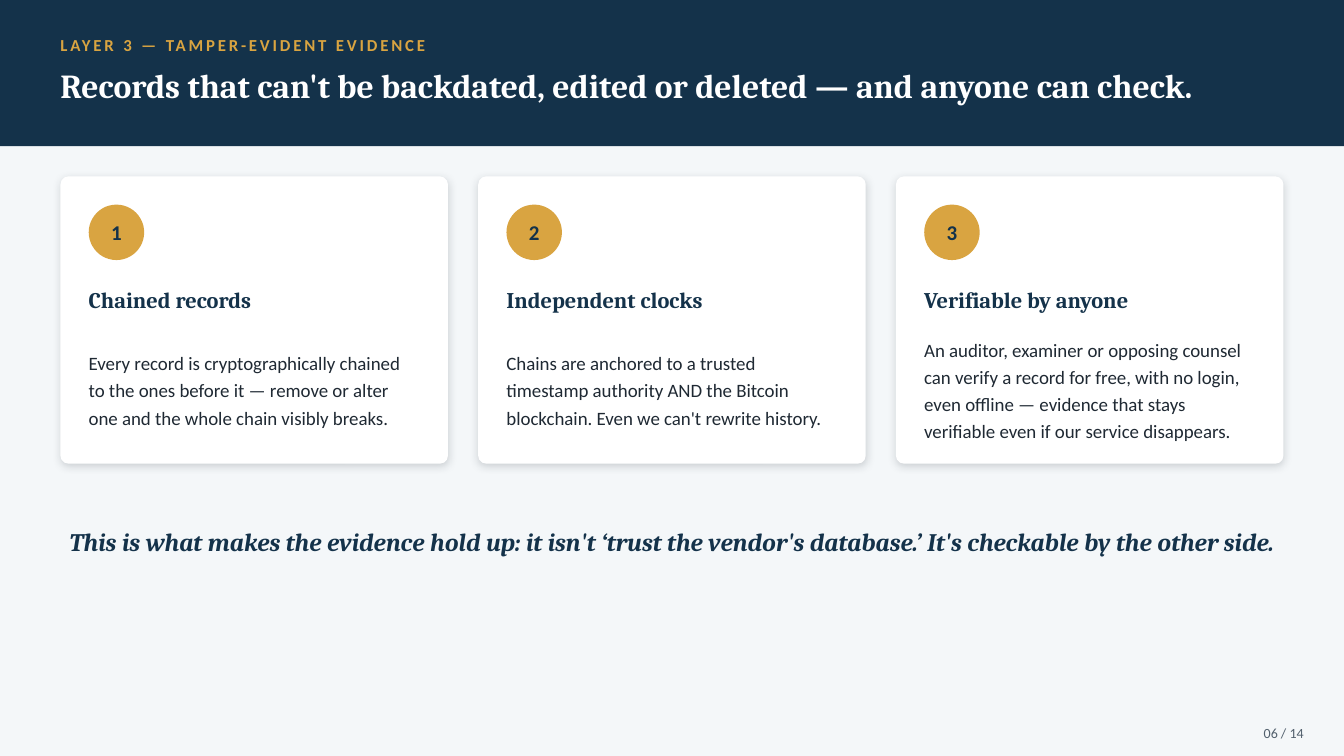
from dataclasses import dataclass

import pptx
import pptx.dml.color
import pptx.enum.shapes
import pptx.enum.text
import pptx.oxml
import pptx.oxml.ns
import pptx.util

Inches = pptx.util.Inches
Shape = pptx.enum.shapes.MSO_SHAPE
Align = pptx.enum.text.PP_ALIGN
Anchor = pptx.enum.text.MSO_ANCHOR


@dataclass(frozen=True)
class Theme:
    navy: str = "14324A"
    gold: str = "D9A441"
    white: str = "FFFFFF"
    ink: str = "1F2933"
    grey: str = "52606D"
    background: str = "F4F7F9"
    heading_font: str = "Cambria"
    body_font: str = "Calibri"
    title_size: float = 24
    statement_size: float = 18
    heading_size: float = 16
    badge_size: float = 15
    body_size: float = 13.5
    eyebrow_size: float = 12
    page_size: float = 10


THEME = Theme()
MARGIN = 0.6
CONTENT_WIDTH = 12.13
CARD_TOP = 1.75
CARD_HEIGHT = 2.85
CARD_GAP = 0.3
CARD_PADDING = 0.28

CARDS = [
    ("Chained records",
     "Every record is cryptographically chained to the ones before it — "
     "remove or alter one and the whole chain visibly breaks."),
    ("Independent clocks",
     "Chains are anchored to a trusted timestamp authority AND the Bitcoin "
     "blockchain. Even we can't rewrite history."),
    ("Verifiable by anyone",
     "An auditor, examiner or opposing counsel can verify a record for free, "
     "with no login, even offline — evidence that stays verifiable even if "
     "our service disappears."),
]


def rgb(colour):
    return pptx.dml.color.RGBColor.from_string(colour)


def write(shape, text, size, colour, font=THEME.body_font, bold=False, italic=False,
          align=Align.LEFT, anchor=Anchor.MIDDLE, line_spacing=None):
    """Fill a shape with one paragraph, without insets, and return the paragraph."""
    frame = shape.text_frame
    frame.word_wrap = True
    frame.vertical_anchor = anchor
    frame.margin_left = frame.margin_right = 0
    frame.margin_top = frame.margin_bottom = 0
    paragraph = frame.paragraphs[0]
    paragraph.text = text
    paragraph.alignment = align
    paragraph.line_spacing = line_spacing
    paragraph.font.name = font
    paragraph.font.size = pptx.util.Pt(size)
    paragraph.font.bold = bold
    paragraph.font.italic = italic
    paragraph.font.color.rgb = rgb(colour)
    return paragraph


def add_text(slide, box, text, size, colour, **style):
    textbox = slide.shapes.add_textbox(*map(Inches, box))
    return write(textbox, text, size, colour, **style)


def add_panel(slide, preset, box, colour):
    panel = slide.shapes.add_shape(preset, *map(Inches, box))
    panel.fill.solid()
    panel.fill.fore_color.rgb = rgb(colour)
    panel.line.fill.background()
    panel.shadow.inherit = False
    return panel


def add_soft_shadow(shape):
    effects = shape.element.spPr.find(pptx.oxml.ns.qn("a:effectLst"))
    effects.append(pptx.oxml.parse_xml(
        f'<a:outerShdw {pptx.oxml.ns.nsdecls("a")} blurRad="{pptx.util.Pt(6)}" '
        f'dist="{pptx.util.Pt(2)}" dir="5400000" algn="bl" rotWithShape="0">'
        f'<a:srgbClr val="{THEME.ink}"><a:alpha val="18000"/></a:srgbClr>'
        '</a:outerShdw>'))


def add_header(slide, eyebrow, title):
    add_panel(slide, Shape.RECTANGLE, (0, 0, 13.33, 1.45), THEME.navy)
    label = add_text(slide, (MARGIN, 0.28, CONTENT_WIDTH, 0.32), eyebrow,
                     THEME.eyebrow_size, THEME.gold, bold=True)
    label.runs[0].font._element.set("spc", "200")
    add_text(slide, (MARGIN, 0.62, CONTENT_WIDTH, 0.78), title,
             THEME.title_size, THEME.white, font=THEME.heading_font, bold=True,
             anchor=Anchor.TOP, line_spacing=1.05)


def add_card(slide, left, width, number, heading, body):
    card = add_panel(slide, Shape.ROUNDED_RECTANGLE,
                     (left, CARD_TOP, width, CARD_HEIGHT), THEME.white)
    card.adjustments[0] = 0.028
    add_soft_shadow(card)

    inner_left = left + CARD_PADDING
    inner_width = width - 2 * CARD_PADDING
    badge = add_panel(slide, Shape.OVAL,
                      (inner_left, CARD_TOP + CARD_PADDING, 0.55, 0.55), THEME.gold)
    write(badge, str(number), THEME.badge_size, THEME.navy, bold=True,
          align=Align.CENTER)
    add_text(slide, (inner_left, CARD_TOP + 1, inner_width, 0.45), heading,
             THEME.heading_size, THEME.navy, font=THEME.heading_font, bold=True)
    add_text(slide, (inner_left, CARD_TOP + 1.45, inner_width, 1.3), body,
             THEME.body_size, THEME.ink, line_spacing=1.2)


def add_cards(slide):
    count = len(CARDS)
    width = (CONTENT_WIDTH - (count - 1) * CARD_GAP) / count
    for index, (heading, body) in enumerate(CARDS):
        left = MARGIN + index * (width + CARD_GAP)
        add_card(slide, left, width, index + 1, heading, body)


def main():
    presentation = pptx.Presentation()
    presentation.slide_width = Inches(13.33)
    presentation.slide_height = Inches(7.5)
    slide = presentation.slides.add_slide(presentation.slide_layouts[6])
    slide.background.fill.solid()
    slide.background.fill.fore_color.rgb = rgb(THEME.background)

    add_header(slide, "LAYER 3 — TAMPER-EVIDENT EVIDENCE",
               "Records that can't be backdated, edited or deleted — and anyone can check.")
    add_cards(slide)
    add_text(slide, (MARGIN, 4.95, CONTENT_WIDTH, 0.85),
             "This is what makes the evidence hold up: it isn't ‘trust the vendor's "
             "database.’ It's checkable by the other side.",
             THEME.statement_size, THEME.navy, font=THEME.heading_font,
             bold=True, italic=True, align=Align.CENTER)
    add_text(slide, (11.73, 7.12, 1.2, 0.3), "06 / 14",
             THEME.page_size, THEME.grey, align=Align.RIGHT)
    presentation.save("out.pptx")


if __name__ == "__main__":
    main()
